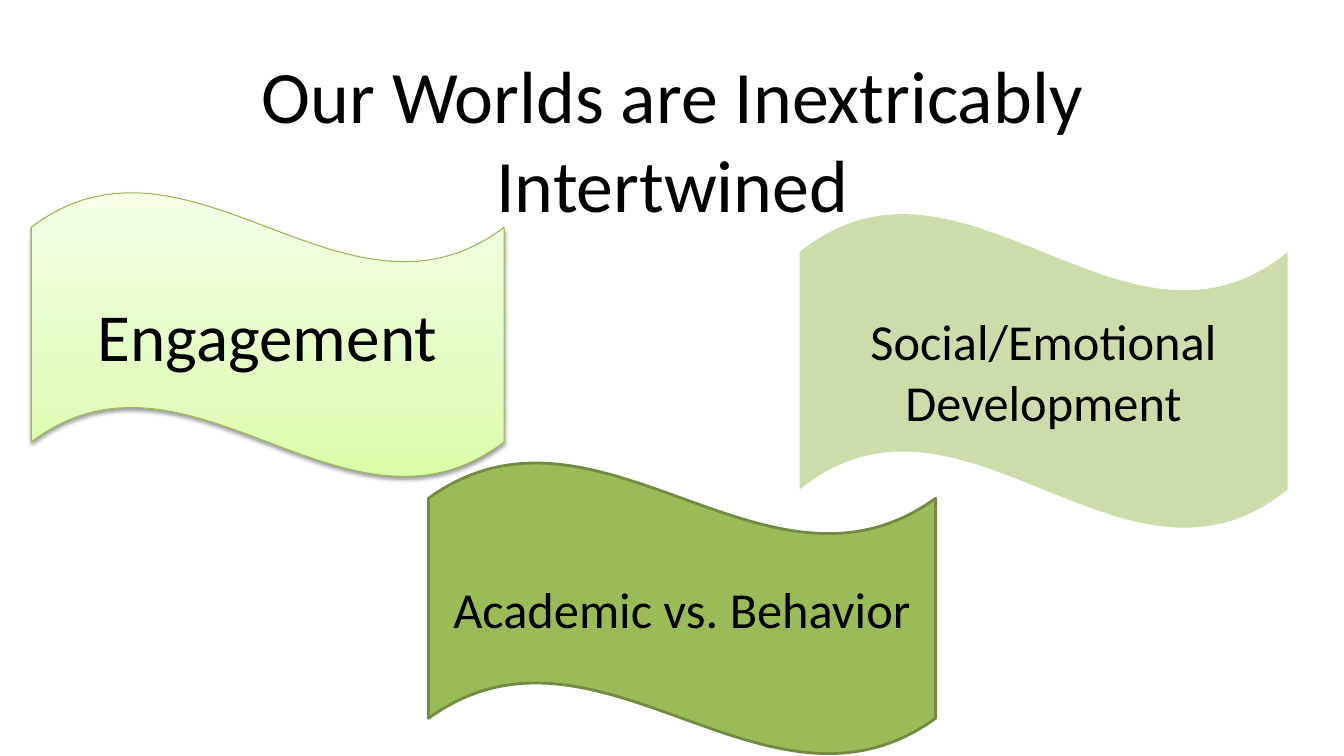
from dataclasses import dataclass
from typing import Optional

from lxml.etree import SubElement
from pptx import Presentation
from pptx.dml.color import RGBColor
from pptx.enum.shapes import MSO_SHAPE as Kind
from pptx.enum.text import MSO_ANCHOR as Anchor, MSO_AUTO_SIZE as Auto, PP_ALIGN as Align
from pptx.oxml.ns import qn
from pptx.util import Inches, Pt

BLACK = RGBColor(0x00, 0x00, 0x00)
GREEN = RGBColor(0x9B, 0xBB, 0x59)
EDGE = RGBColor(0x98, 0xB9, 0x55)
DARK = RGBColor(0x73, 0x8A, 0x42)
FADE = (
    (0, RGBColor(0xDA, 0xFD, 0xA7)),
    (35, RGBColor(0xE4, 0xFC, 0xC2)),
    (100, RGBColor(0xF5, 0xFF, 0xE7)),
)


@dataclass(frozen=True)
class Wave:
    text: str
    left: float
    top: float
    width: float
    height: float
    size: float
    line: Optional[RGBColor] = None
    weight: float = 0
    alpha: int = 100
    raised: bool = False


WAVES = (
    Wave("Engagement", 0.31, 1.9, 4.69, 2.84, 48, EDGE, 0.75, raised=True),
    Wave("Academic vs. Behavior", 4.25, 4.58, 5.03, 2.91, 36, DARK, 2),
    Wave("Social/Emotional Development", 7.93, 2.11, 4.84, 3.14, 36, alpha=50),
)


def place(shape, left: float, top: float, width: float, height: float) -> None:
    shape.left, shape.top = Inches(left), Inches(top)
    shape.width, shape.height = Inches(width), Inches(height)


def write(shape, text: str, size: float) -> None:
    frame = shape.text_frame
    frame.word_wrap = True
    frame.auto_size = Auto.NONE
    frame.vertical_anchor = Anchor.MIDDLE
    para = frame.paragraphs[0]
    para.alignment = Align.CENTER
    run = para.add_run()
    run.text = text
    run.font.name = "Calibri"
    run.font.size = Pt(size)
    run.font.color.rgb = BLACK


def add_tint(parent, color: RGBColor, alpha: int) -> None:
    tint = SubElement(parent, qn("a:srgbClr"), val=str(color))
    SubElement(tint, qn("a:alpha"), val=str(alpha * 1000))


def add_fade(shape) -> None:
    shape.fill.gradient()
    shape.fill.gradient_angle = 90
    stops = shape._element.spPr.find(".//" + qn("a:gsLst"))
    for stop in list(stops):
        stops.remove(stop)
    for spot, color in FADE:
        stop = SubElement(stops, qn("a:gs"), pos=str(spot * 1000))
        add_tint(stop, color, 100)


def add_shade(shape) -> None:
    group = shape._element.spPr.find(qn("a:effectLst"))
    shade = SubElement(
        group, qn("a:outerShdw"), blurRad=str(Pt(3.1)), dist=str(Pt(1.6)),
        dir=str(90 * 60000), rotWithShape="0",
    )
    add_tint(shade, BLACK, 38)


def add_wave(slide, wave: Wave) -> None:
    shape = slide.shapes.add_shape(Kind.WAVE, 0, 0, 0, 0)
    place(shape, wave.left, wave.top, wave.width, wave.height)
    shape.shadow.inherit = False
    if wave.raised:
        add_fade(shape)
        add_shade(shape)
    else:
        shape.fill.solid()
        shape.fill.fore_color.rgb = GREEN
    if wave.alpha < 100:
        tint = shape._element.spPr.find(qn("a:solidFill"))[0]
        SubElement(tint, qn("a:alpha"), val=str(wave.alpha * 1000))
    if wave.line is None:
        shape.line.fill.background()
    else:
        shape.line.color.rgb = wave.line
        shape.line.width = Pt(wave.weight)
    write(shape, wave.text, wave.size)


def main() -> None:
    deck = Presentation()
    deck.slide_width, deck.slide_height = Inches(13.33), Inches(7.5)
    slide = deck.slides.add_slide(deck.slide_layouts[5])
    title = slide.shapes.title
    place(title, 0.67, 0.75, 12, 1.25)
    write(title, "Our Worlds are Inextricably Intertwined", 52.8)
    title.text_frame.margin_left = title.text_frame.margin_right = Inches(0.2)
    for wave in WAVES:
        add_wave(slide, wave)
    deck.save("out.pptx")


if __name__ == "__main__":
    main()
